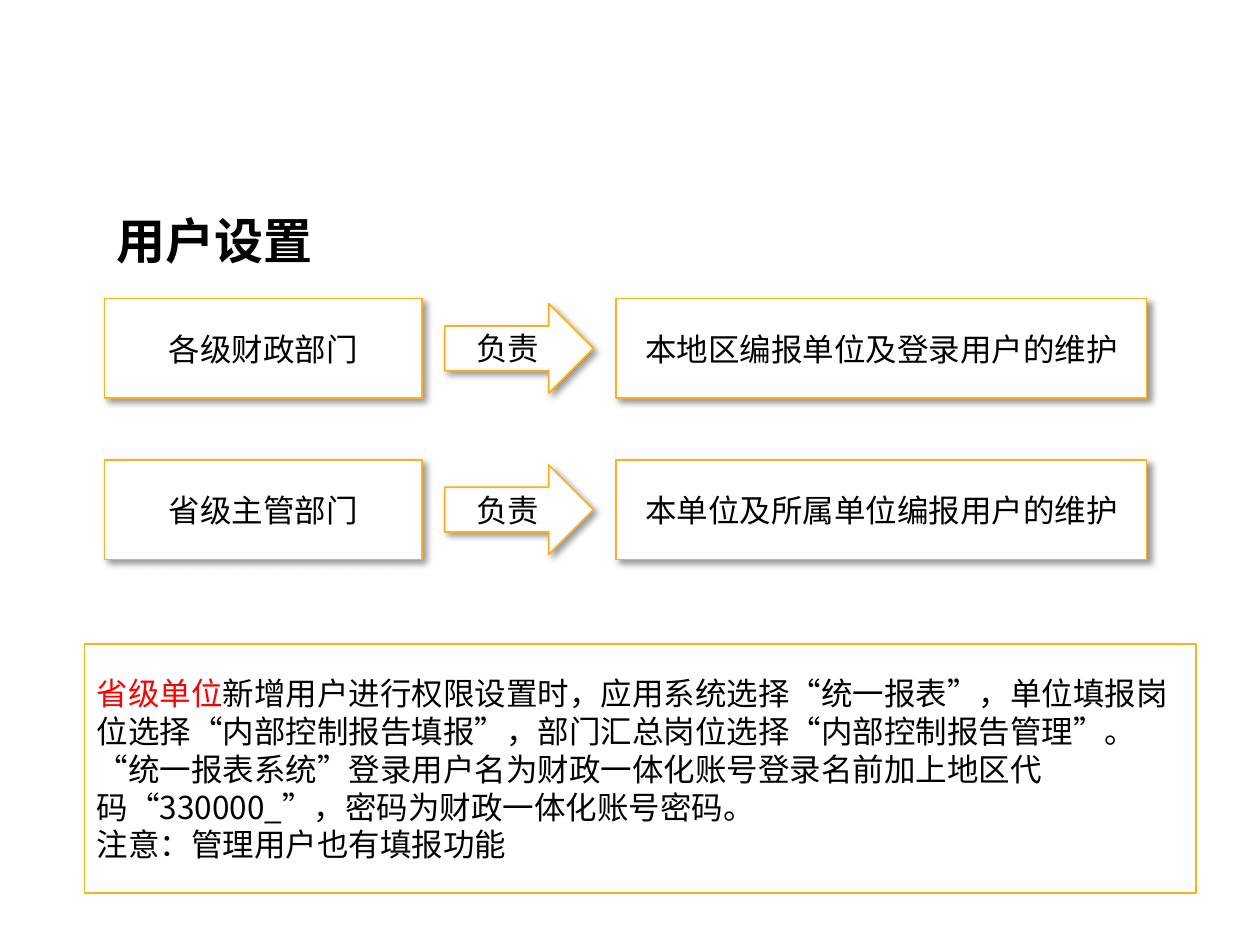
from lxml.etree import SubElement
from pptx import Presentation
from pptx.dml.color import RGBColor
from pptx.enum.lang import MSO_LANGUAGE_ID as Language
from pptx.enum.shapes import MSO_SHAPE as Shape
from pptx.enum.text import MSO_ANCHOR as Anchor, MSO_AUTO_SIZE as AutoSize, PP_ALIGN as Align
from pptx.oxml.ns import qn
from pptx.util import Inches, Pt

FONT = "Noto Sans CJK SC"
WHITE = RGBColor(0xFF, 0xFF, 0xFF)
BLACK = RGBColor(0, 0, 0)
RED = RGBColor(0xFF, 0, 0)
AMBER = RGBColor(0xFC, 0xB1, 0x1C)

TITLE = "用户设置"
DUTIES = [
    ("各级财政部门", "负责", "本地区编报单位及登录用户的维护"),
    ("省级主管部门", "负责", "本单位及所属单位编报用户的维护"),
]
NOTE = [
    [
        ("省级单位", RED),
        ("新增用户进行权限设置时，应用系统选择“统一报表”，单位填报岗位选择“内部控制报告填报”，"
         "部门汇总岗位选择“内部控制报告管理”。“统一报表系统”登录用户名为财政一体化账号登录名前"
         "加上地区代码“330000_”，密码为财政一体化账号密码。", BLACK),
    ],
    [("注意：管理用户也有填报功能", BLACK)],
]

COLUMNS = [
    (Shape.RECTANGLE, 0.83, 2.52, 0.79),
    (Shape.RIGHT_ARROW, 3.53, 1.18, 0.71),
    (Shape.RECTANGLE, 4.89, 4.21, 0.79),
]
FIRST_ROW_CENTER = 2.765
ROW_STEP = 1.28

BODY_FORMAT = {"size": Pt(18), "bold": False}
TITLE_FORMAT = {"size": Pt(28), "bold": True}
COMMON_FORMAT = {"name": FONT, "language_id": Language.SIMPLIFIED_CHINESE}


def add_shadow(shape):
    effects = shape._element.spPr.find(qn("a:effectLst"))
    shadow = SubElement(effects, qn("a:outerShdw"), blurRad=str(Pt(4)), dist=str(Pt(3)),
                        dir="2700000", algn="tl", rotWithShape="0")
    color = SubElement(shadow, qn("a:srgbClr"), val=str(BLACK))
    SubElement(color, qn("a:alpha"), val="40000")


def add_box(slide, kind, bounds, paragraphs, align=Align.LEFT, line=AMBER,
            anchor=Anchor.MIDDLE, text_format=BODY_FORMAT):
    shape = slide.shapes.add_shape(kind, *map(Inches, bounds))
    shape.shadow.inherit = False
    shape.fill.solid()
    shape.fill.fore_color.rgb = WHITE
    if line is None:
        shape.line.fill.background()
    else:
        shape.line.color.rgb = line
        shape.line.width = Pt(1)
    frame = shape.text_frame
    frame.word_wrap = True
    frame.vertical_anchor = anchor
    for index, runs in enumerate(paragraphs):
        paragraph = frame.add_paragraph() if index else frame.paragraphs[0]
        paragraph.alignment = align
        for text, color in runs:
            run = paragraph.add_run()
            run.text = text
            run.font.color.rgb = color
            for name, value in {**COMMON_FORMAT, **text_format}.items():
                setattr(run.font, name, value)
            SubElement(run.font._element, qn("a:ea"), typeface=FONT)
    return shape


presentation = Presentation()
presentation.slide_width = Inches(10)
presentation.slide_height = Inches(7.5)
slide = presentation.slides.add_slide(presentation.slide_layouts[6])

for row, texts in enumerate(DUTIES):
    center = FIRST_ROW_CENTER + row * ROW_STEP
    for text, (kind, left, width, height) in zip(texts, COLUMNS):
        bounds = (left, center - height / 2, width, height)
        add_shadow(add_box(slide, kind, bounds, [[(text, BLACK)]], Align.CENTER))

add_box(slide, Shape.FLOWCHART_PROCESS, (0.67, 5.11, 8.82, 1.98), NOTE)
title = add_box(slide, Shape.RECTANGLE, (0.83, 1.62, 8.66, 0.57), [[(TITLE, BLACK)]],
                line=None, anchor=Anchor.TOP, text_format=TITLE_FORMAT)
title.text_frame.auto_size = AutoSize.SHAPE_TO_FIT_TEXT

presentation.save("out.pptx")
